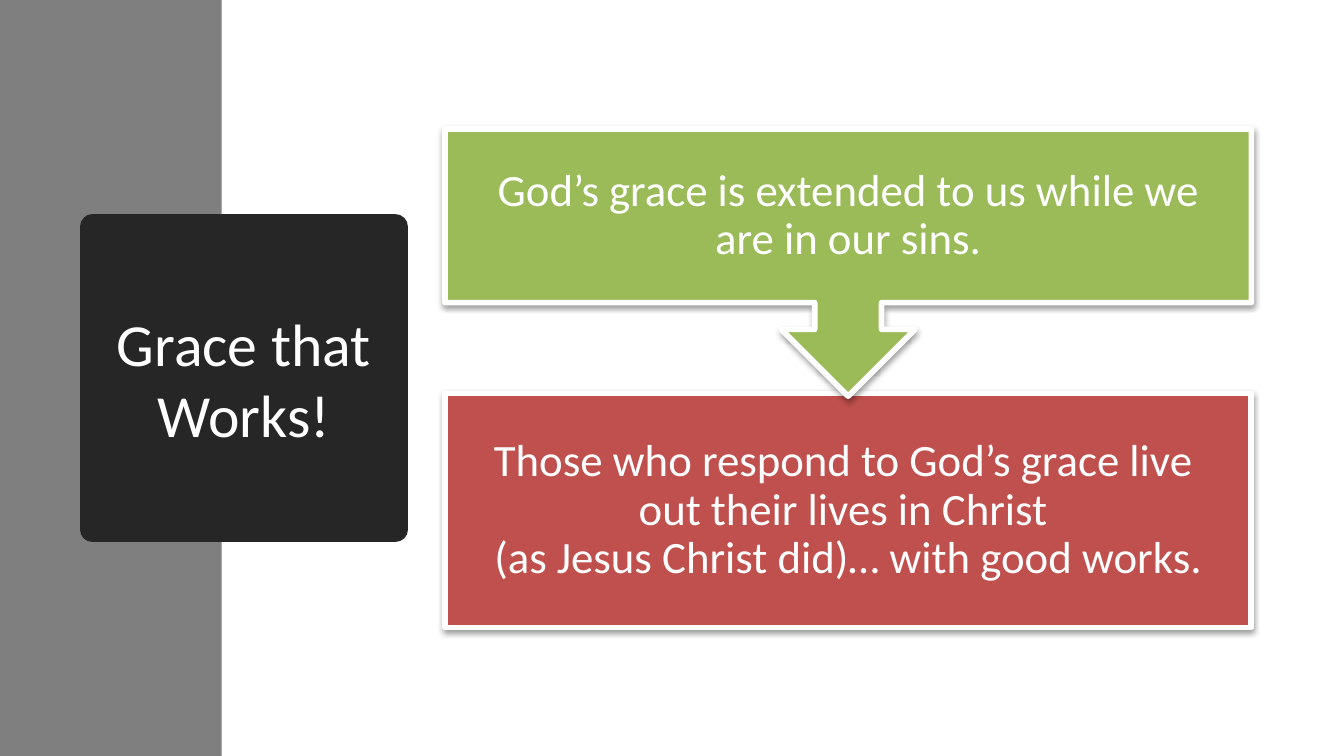
from lxml import etree
from pptx import Presentation
from pptx import util as u
from pptx.dml.color import RGBColor
from pptx.enum import shapes, text
from pptx.oxml import ns

WHITE = RGBColor(0xFF, 0xFF, 0xFF)
GRAY = RGBColor(0x7F, 0x7F, 0x7F)
CHARCOAL = RGBColor(0x26, 0x26, 0x26)
GREEN = RGBColor(0x9B, 0xBB, 0x59)
RED = RGBColor(0xC0, 0x50, 0x4D)

SLIDE_WIDTH, SLIDE_HEIGHT = u.Cm(25.4), u.Cm(14.29)
STEP_LEFT, STEP_WIDTH = 8.41, 15.24
SHAPE = shapes.MSO_SHAPE


def set_attributes(target, values):
    for name, value in values.items():
        setattr(target, name, value)


class SlideBuilder:
    FONT = "Calibri"

    def __init__(self, slide):
        self.slide = slide

    def block(self, kind, box, color):
        shape = self.slide.shapes.add_shape(kind, *map(u.Cm, box))
        shape.fill.solid()
        shape.fill.fore_color.rgb = color
        shape.line.fill.background()
        shape.shadow.inherit = False
        return shape

    def outline(self, shape, color, width):
        """Give the shape a line with rounded joins."""
        shape.line.color.rgb = color
        shape.line.width = u.Pt(width)
        line = shape._element.spPr.find(ns.qn("a:ln"))
        etree.SubElement(line, ns.qn("a:round"))

    def soft_shadow(self, shape):
        effects = shape._element.spPr.find(ns.qn("a:effectLst"))
        shadow = etree.SubElement(
            effects, ns.qn("a:outerShdw"), blurRad="40000", dist="20000",
            dir="5400000", rotWithShape="0")
        color = etree.SubElement(shadow, ns.qn("a:srgbClr"), val="000000")
        etree.SubElement(color, ns.qn("a:alpha"), val="38000")

    def label(self, shape, words, size, spacing=1.0, margin=0.25):
        frame = shape.text_frame
        sides = ("left", "top", "right", "bottom")
        set_attributes(frame, {
            "word_wrap": True,
            "vertical_anchor": text.MSO_ANCHOR.MIDDLE,
            **{f"margin_{side}": u.Cm(margin) for side in sides},
        })
        paragraph = frame.paragraphs[0]
        paragraph.text = words
        set_attributes(paragraph, {
            "alignment": text.PP_ALIGN.CENTER,
            "line_spacing": spacing,
        })
        for run in paragraph.runs:
            set_attributes(run.font, {"name": self.FONT, "size": u.Pt(size)})
            run.font.color.rgb = WHITE

    def title(self, box, words):
        """Draw a square whose thick outline rounds its corners."""
        shape = self.block(SHAPE.RECTANGLE, box, CHARCOAL)
        self.outline(shape, CHARCOAL, 13.75)
        self.label(shape, words, 32)

    def step(self, kind, top, height, color, words):
        shape = self.block(kind, (STEP_LEFT, top, STEP_WIDTH, height), color)
        self.outline(shape, WHITE, 3)
        self.soft_shadow(shape)
        self.label(shape, words, 24, spacing=0.9, margin=0.48)


def main():
    presentation = Presentation()
    set_attributes(presentation, {
        "slide_width": SLIDE_WIDTH, "slide_height": SLIDE_HEIGHT})
    slide = presentation.slides.add_slide(presentation.slide_layouts[6])
    builder = SlideBuilder(slide)

    builder.block(SHAPE.RECTANGLE, (0, 0, 4.19, SLIDE_HEIGHT.cm), GRAY)
    builder.title((1.75, 4.29, 5.72, 5.72), "Grace that Works!")
    builder.step(
        SHAPE.RECTANGLE, 7.44, 4.42, RED,
        "Those who respond to God’s grace live \n"
        "out their lives in Christ \n"
        "(as Jesus Christ did)… with good works.")
    builder.step(
        SHAPE.DOWN_ARROW_CALLOUT, 2.44, 5.05, GREEN,
        "God’s grace is extended to us while we are in our sins.")

    presentation.save("out.pptx")


if __name__ == "__main__":
    main()
